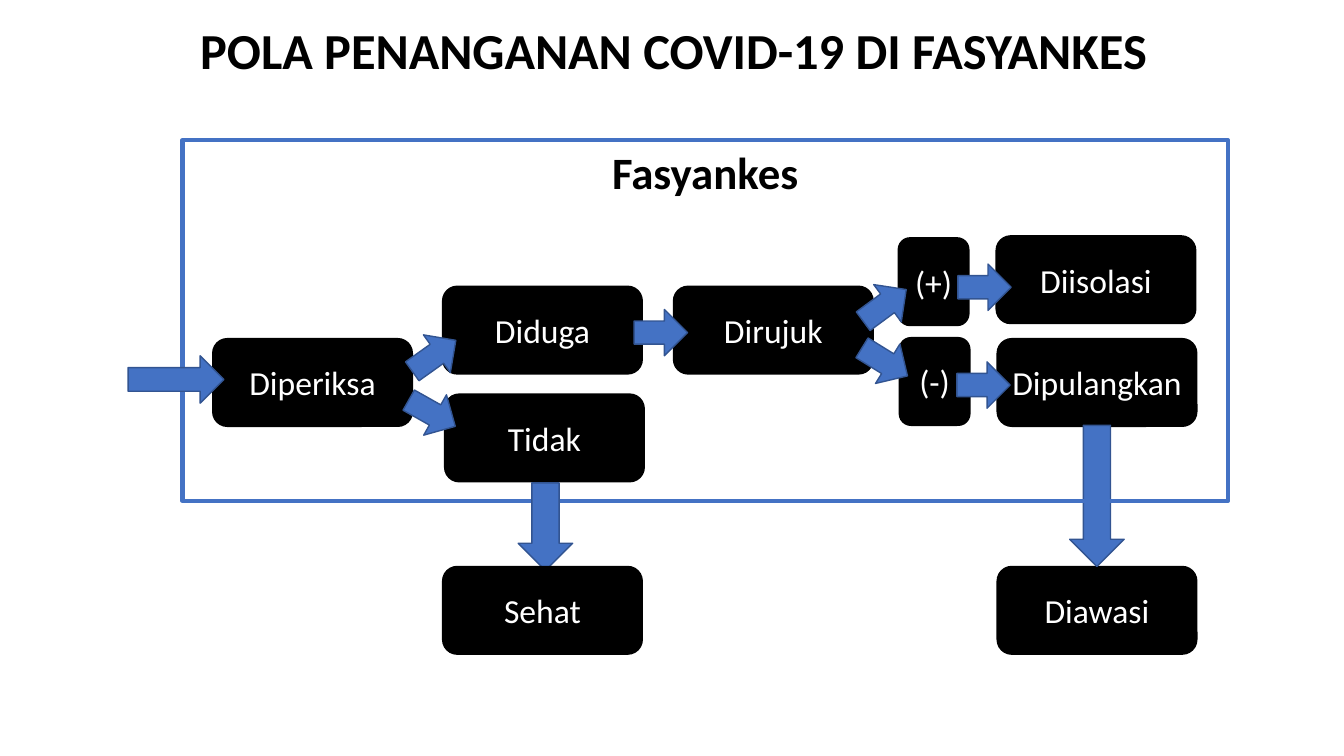
"""Build the slide on how health facilities handle COVID-19 patients."""
from dataclasses import dataclass

import pptx
import pptx.dml.color
import pptx.enum.shapes
import pptx.enum.text
import pptx.util

Inches = pptx.util.Inches
Shapes = pptx.enum.shapes.MSO_SHAPE
Anchor = pptx.enum.text.MSO_ANCHOR

FONT = "Calibri"
BLACK, WHITE, BLUE, DARK_BLUE = "000000", "FFFFFF", "4472C4", "325491"
STEP_WIDTH, STEP_HEIGHT, RESULT_WIDTH = 1.98, 0.87, 0.7
FRAME_LEFT, FRAME_TOP, FRAME_WIDTH, FRAME_HEIGHT = 1.81, 1.39, 10.37, 3.58


@dataclass
class Step:
    label: str
    left: float
    top: float
    width: float = STEP_WIDTH


@dataclass
class Arrow:
    left: float
    top: float
    width: float = 0.53
    height: float = 0.46
    rotation: float = 0
    preset: Shapes = Shapes.RIGHT_ARROW


STEPS = [
    Step("Diperiksa", 2.11, 3.36),
    Step("Dirujuk", 6.68, 2.84),
    Step("Tidak", 4.41, 3.91),
    Step("Diduga", 4.39, 2.84),
    Step("(-)", 8.92, 3.35, RESULT_WIDTH),
    Step("(+)", 8.91, 2.36, RESULT_WIDTH),
    Step("Diisolasi", 9.88, 2.34),
    Step("Diawasi", 9.89, 5.62),
    Step("Dipulangkan", 9.89, 3.36),
]
HEALTHY = Step("Sehat", 4.39, 5.62)
TO_MONITORING = Arrow(10.61, 4.22, 0.54, 1.4, preset=Shapes.DOWN_ARROW)
TO_HEALTHY = Arrow(5.14, 4.79, 0.54, 0.87, preset=Shapes.DOWN_ARROW)
FLOW_ARROWS = [
    Arrow(1.27, 3.53, 0.95, 0.47),
    Arrow(6.29, 3.07),
    Arrow(9.5, 2.62),
    Arrow(9.49, 3.59),
    Arrow(4.04, 3.3, rotation=324.6),
    Arrow(4.02, 3.87, rotation=29.4),
    Arrow(8.51, 2.8, rotation=323.6),
    Arrow(8.51, 3.36, rotation=31.7),
]


def color(value: str) -> pptx.dml.color.RGBColor:
    return pptx.dml.color.RGBColor.from_string(value)


def write(shape, text: str, size: float, ink: str, bold: bool, anchor: Anchor) -> None:
    frame = shape.text_frame
    frame.word_wrap = True
    frame.vertical_anchor = anchor
    para = frame.paragraphs[0]
    para.text = text
    para.alignment = pptx.enum.text.PP_ALIGN.CENTER
    para.font.name = FONT
    para.font.size = pptx.util.Pt(size)
    para.font.bold = bold
    para.font.color.rgb = color(ink)


def draw_shape(page, preset: Shapes, left: float, top: float, width: float,
               height: float, fill: str | None, line: str, weight: float = 1):
    shape = page.shapes.add_shape(
        preset, Inches(left), Inches(top), Inches(width), Inches(height))
    shape.shadow.inherit = False
    if fill is None:
        shape.fill.background()
    else:
        shape.fill.solid()
        shape.fill.fore_color.rgb = color(fill)
    shape.line.color.rgb = color(line)
    shape.line.width = pptx.util.Pt(weight)
    return shape


def draw_step(page, step: Step) -> None:
    box = draw_shape(page, Shapes.ROUNDED_RECTANGLE, step.left, step.top,
                     step.width, STEP_HEIGHT, BLACK, BLACK)
    write(box, step.label, 24, WHITE, False, Anchor.MIDDLE)


def draw_arrow(page, arrow: Arrow) -> None:
    shape = draw_shape(page, arrow.preset, arrow.left, arrow.top,
                       arrow.width, arrow.height, BLUE, DARK_BLUE)
    shape.rotation = arrow.rotation


def draw_title(page) -> None:
    title = page.shapes.title
    title.left, title.top = Inches(1.83), Inches(0.14)
    title.width, title.height = Inches(9.71), Inches(0.71)
    write(title, "POLA PENANGANAN COVID-19 DI FASYANKES", 36, BLACK, True, Anchor.TOP)
    title.text_frame.auto_size = pptx.enum.text.MSO_AUTO_SIZE.NONE


def draw_facility(page) -> None:
    draw_shape(page, Shapes.RECTANGLE, FRAME_LEFT, FRAME_TOP,
               FRAME_WIDTH, FRAME_HEIGHT, None, BLUE, 3)
    heading = page.shapes.add_textbox(
        Inches(FRAME_LEFT), Inches(FRAME_TOP), Inches(FRAME_WIDTH), Inches(0.64))
    write(heading, "Fasyankes", 32, BLACK, True, Anchor.TOP)


def main() -> None:
    deck = pptx.Presentation()
    deck.slide_width, deck.slide_height = Inches(13.33), Inches(7.5)
    page = deck.slides.add_slide(deck.slide_layouts.get_by_name("Title Only"))
    draw_title(page)
    for step in STEPS:
        draw_step(page, step)
    draw_arrow(page, TO_MONITORING)
    draw_facility(page)
    draw_arrow(page, TO_HEALTHY)
    draw_step(page, HEALTHY)
    for arrow in FLOW_ARROWS:
        draw_arrow(page, arrow)
    deck.save("out.pptx")


if __name__ == "__main__":
    main()
